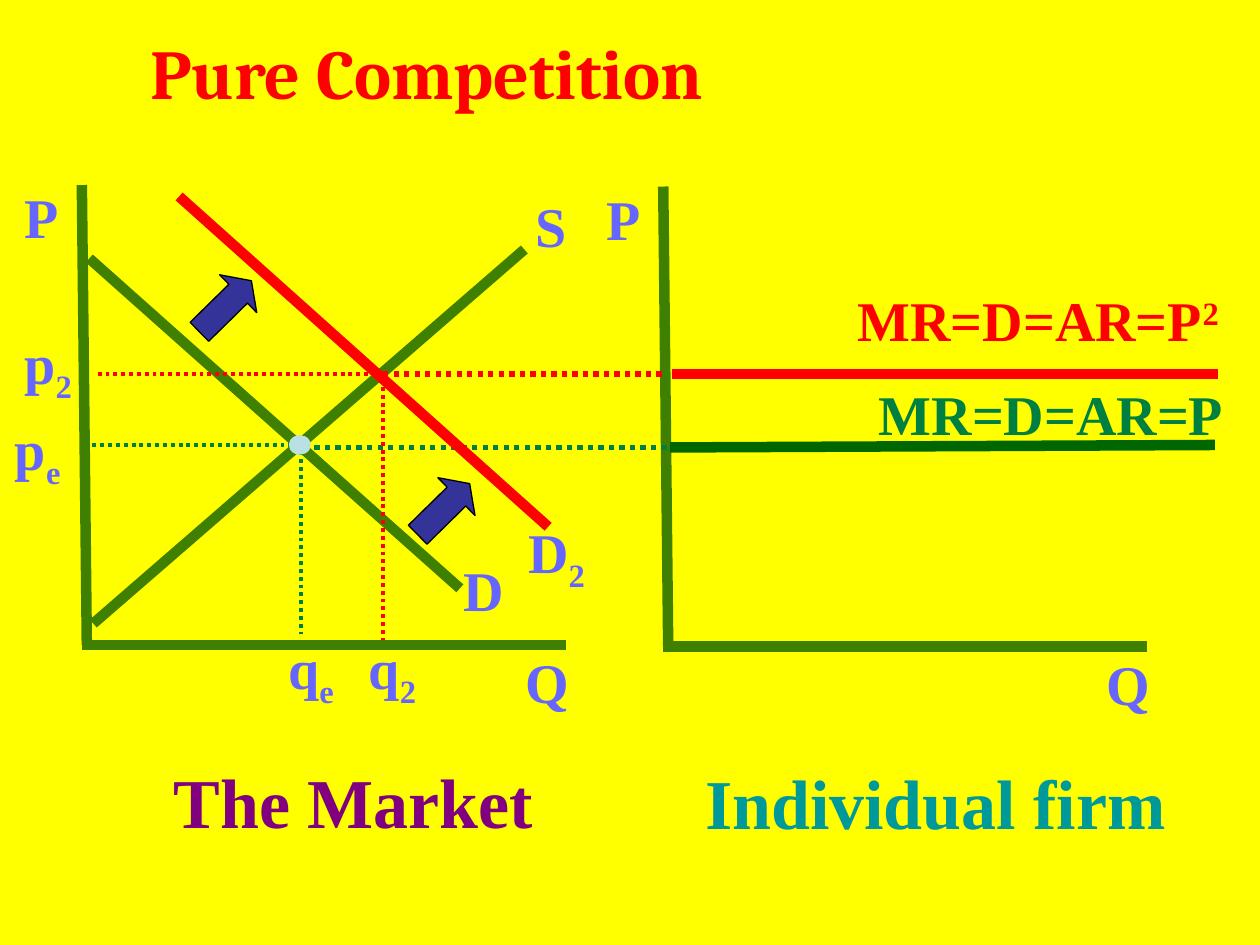
"""Build a slide that compares the market and the individual firm under pure competition."""
from lxml import etree
from pptx import Presentation
from pptx import util as u
from pptx.dml.color import RGBColor
from pptx.enum import dml, shapes, text
from pptx.oxml import ns

COLOURS = {
    "ground": "FFFF00", "red": "FF0000", "label": "6666FF", "axis": "408000",
    "green": "008040", "firm": "006600", "purple": "800080", "teal": "009999",
    "point": "BBE0E3", "arrow": "333399", "outline": "000000",
}


def colour(name):
    return RGBColor.from_string(COLOURS[name])


def write(box, pieces, size, shade, face, align):
    frame = box.text_frame
    frame_format = {"word_wrap": True, "vertical_anchor": text.MSO_ANCHOR.TOP,
                    "auto_size": text.MSO_AUTO_SIZE.NONE}
    for name, value in frame_format.items():
        setattr(frame, name, value)
    para = frame.paragraphs[0]
    para.alignment = align
    for words, baseline in pieces:
        span = para.add_run()
        span.text = words
        for name, value in {"size": u.Pt(size), "bold": True, "name": face}.items():
            setattr(span.font, name, value)
        span.font.color.rgb = colour(shade)
        if baseline:
            span._r.get_or_add_rPr().set("baseline", str(baseline * 1000))


deck = Presentation()
deck.slide_width, deck.slide_height = u.Cm(25.4), u.Cm(19.05)
page = deck.slides.add_slide(deck.slide_layouts[5])
page.background.fill.solid()
page.background.fill.fore_color.rgb = colour("ground")

title = page.shapes.title
place = {"left": 2.77, "top": 0.46, "width": 20.04, "height": 1.96}
for name, value in place.items():
    setattr(title, name, u.Cm(value))
write(title, [("Pure Competition", 0)], 40, "red", "Cambria", text.PP_ALIGN.LEFT)

labels = [
    ("The Market", "", 0, 2.11, 15.16, 8.89, 40, "purple"),
    ("Individual firm", "", 0, 13.87, 15.19, 9.88, 40, "teal"),
    ("MR=D=AR=P", "", 0, 16.41, 7.52, 8.51, 32, "green"),
    ("MR=D=AR=P", "2", 30, 16.31, 5.64, 8.51, 32, "red"),
    ("S", "", 0, 10.44, 3.73, 1.24, 32, "label"),
    ("D", "", 0, 9.09, 11.07, 1.32, 32, "label"),
    ("D", "2", -25, 10.24, 10.31, 1.8, 32, "label"),
    ("p", "e", -25, 0, 8.23, 1.47, 32, "label"),
    ("p", "2", -25, 0, 6.5, 1.7, 32, "label"),
    ("q", "e", -25, 5.51, 12.65, 1.47, 32, "label"),
    ("q", "2", -25, 6.91, 12.65, 1.73, 32, "label"),
]
lines = []
for shift, drop in [(0, 0), (11.72, 0.03)]:
    labels += [
        ("P", "", 0, 0.25 + shift, 3.56 + drop, 1.19, 32, "label"),
        ("Q", "", 0, 10.34 + shift, 12.93 + drop, 1.17, 32, "label"),
    ]
    lines += [
        (1.65 + shift, 13 + drop, 11.4 + shift, 13 + drop, "axis", 6, False),
        (1.75 + shift, 13 + drop, 1.65 + shift, 3.73 + drop, "axis", 6, False),
    ]

for words, mark, baseline, left, top, width, size, shade in labels:
    box = page.shapes.add_textbox(u.Cm(left), u.Cm(top), u.Cm(width), u.Cm(size * 0.05))
    pieces = [(words, 0)] + ([(mark, baseline)] if mark else [])
    write(box, pieces, size, shade, "Times New Roman", text.PP_ALIGN.RIGHT)

lines += [
    (13.51, 9.02, 24.49, 8.97, "firm", 6, False),
    (1.88, 12.57, 10.57, 5.03, "axis", 6, False),
    (9.27, 11.86, 1.8, 5.21, "axis", 6, False),
    (6.05, 8.97, 1.85, 8.97, "green", 2.25, True),
    (6.07, 8.94, 6.07, 12.78, "green", 2.25, True),
    (13.44, 9.02, 6.3, 9.02, "green", 3, True),
    (11.05, 10.62, 3.61, 3.96, "red", 6, False),
    (7.42, 7.54, 1.9, 7.54, "red", 2.25, True),
    (13.34, 7.54, 7.62, 7.54, "red", 3, True),
    (7.72, 7.8, 7.72, 12.9, "red", 2.25, True),
    (13.54, 7.54, 24.56, 7.54, "red", 6, False),
]
for *ends, shade, weight, dotted in lines:
    line = page.shapes.add_connector(shapes.MSO_CONNECTOR.STRAIGHT, *map(u.Cm, ends))
    line.line.color.rgb = colour(shade)
    line.line.width = u.Pt(weight)
    if dotted:
        line.line.dash_style = dml.MSO_LINE.ROUND_DOT
    etree.SubElement(line._element.spPr, ns.qn("a:effectLst"))

kinds = shapes.MSO_SHAPE
figures = [
    (kinds.OVAL, 5.84, 8.79, 0.41, 0.36, 0, "point", "point", 1),
    (kinds.UP_ARROW, 8.41, 9.53, 1.07, 1.47, 45.5, "arrow", "outline", 0.75),
    (kinds.UP_ARROW, 4.01, 5.44, 1.07, 1.47, 45.5, "arrow", "outline", 0.75),
]
for kind, left, top, width, height, turn, fill, edge, weight in figures:
    figure = page.shapes.add_shape(kind, *map(u.Cm, (left, top, width, height)))
    figure.shadow.inherit = False
    figure.rotation = turn
    figure.fill.solid()
    figure.fill.fore_color.rgb = colour(fill)
    figure.line.color.rgb = colour(edge)
    figure.line.width = u.Pt(weight)
    if kind == kinds.UP_ARROW:
        figure.adjustments[0], figure.adjustments[1] = 0.5, 0.35

deck.save("out.pptx")
